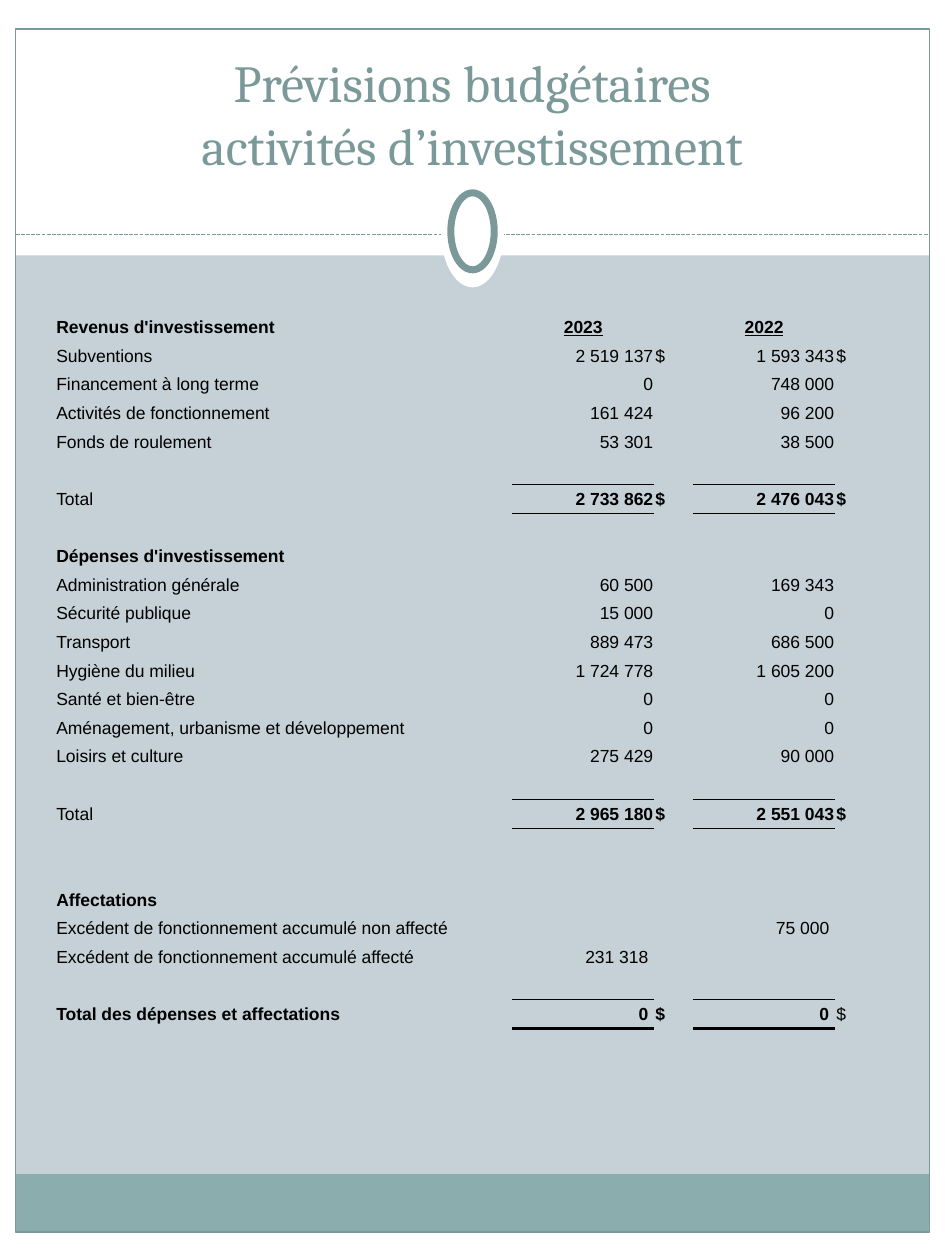
from lxml.etree import SubElement
from pptx import Presentation
from pptx.dml.color import RGBColor
from pptx.enum.dml import MSO_LINE_DASH_STYLE as DASH
from pptx.enum.shapes import MSO_CONNECTOR, MSO_SHAPE as SHAPE
from pptx.enum.text import MSO_ANCHOR as ANCHOR, MSO_AUTO_SIZE as AUTO_SIZE, PP_ALIGN as ALIGN
from pptx.oxml.ns import qn
from pptx.util import Pt

COLORS = {"page": "C5D1D7", "white": "FFFFFF", "band": "8CADAE", "accent": "7C999A", "text": "000000"}
NO_STYLE = "{2D5ABB26-0587-4C30-8999-92F81FD0307C}"
COLUMN_WIDTHS = (186.5, 52.5, 22.2, 81.2, 22.2, 81.2, 22.2)
AMOUNT_COLUMNS = (3, 5)
WIDE_LABEL_ROWS = (14, 21, 22)
BUDGET_ROWS = [
    ("years", "Revenus d'investissement", "2023", "2022"),
    ("currency", "Subventions", "2 519 137", "1 593 343"),
    ("item", "Financement à long terme", "0", "748 000"),
    ("item", "Activités de fonctionnement", "161 424", "96 200"),
    ("item", "Fonds de roulement", "53 301", "38 500"),
    ("item", "", "", ""),
    ("total", "Total", "2 733 862", "2 476 043"),
    ("item", "", "", ""),
    ("heading", "Dépenses d'investissement", "", ""),
    ("item", "Administration générale", "60 500", "169 343"),
    ("item", "Sécurité publique", "15 000", "0"),
    ("item", "Transport", "889 473", "686 500"),
    ("item", "Hygiène du milieu", "1 724 778", "1 605 200"),
    ("item", "Santé et bien-être", "0", "0"),
    ("item", "Aménagement, urbanisme et développement", "0", "0"),
    ("item", "Loisirs et culture", "275 429", "90 000"),
    ("item", "", "", ""),
    ("total", "Total", "2 965 180", "2 551 043"),
    ("item", "", "", ""),
    ("item", "", "", ""),
    ("heading", "Affectations", "", ""),
    ("item", "Excédent de fonctionnement accumulé non affecté", "", "75 000 "),
    ("item", "Excédent de fonctionnement accumulé affecté", "231 318 ", ""),
    ("item", "", "", ""),
    ("balance", "Total des dépenses et affectations", "0 ", "0 "),
]


def rgb(name):
    """Return the named palette colour."""
    return RGBColor.from_string(COLORS[name])


def add_panel(slide, kind, box, fill=None, line=None, weight=0.75):
    """Add a flat shape with an optional fill and outline."""
    shape = slide.shapes.add_shape(kind, *(Pt(value) for value in box))
    shape.shadow.inherit = False
    if fill:
        shape.fill.solid()
        shape.fill.fore_color.rgb = rgb(fill)
    else:
        shape.fill.background()
    if line:
        shape.line.color.rgb = rgb(line)
        shape.line.width = Pt(weight)
    else:
        shape.line.fill.background()


def add_frame(slide, left, top, width, height):
    """Draw the margins, footer band, outline, dashed rule and ring."""
    margin, header, footer = 9, 146, 16
    inner = width - 2 * margin
    rule, center = top + 134, left + width / 2
    bottom = top + height - footer
    for box in (
        (left, bottom, width, footer),
        (left, top, width, header),
        (left, top, margin, height),
        (left + width - margin, top, margin, height),
    ):
        add_panel(slide, SHAPE.RECTANGLE, box, "white")
    add_panel(slide, SHAPE.RECTANGLE, (left + margin, bottom - 33, inner, 33), "band")
    add_panel(slide, SHAPE.RECTANGLE, (left + margin, top + 16.5, inner, bottom - top - 16.5), line="accent")
    connector = slide.shapes.add_connector(
        MSO_CONNECTOR.STRAIGHT, Pt(left + margin), Pt(rule), Pt(left + width - margin), Pt(rule))
    connector.line.color.rgb = rgb("accent")
    connector.line.width = Pt(0.75)
    connector.line.dash_style = DASH.SQUARE_DOT
    SubElement(connector._element.spPr, qn("a:effectLst"))
    add_panel(slide, SHAPE.OVAL, (center - 18, top + 100.2, 36, 64), "white")
    add_panel(slide, SHAPE.OVAL, (center - 12.4, top + 110.2, 24.8, 44), "white", "accent", 4)


def add_text(paragraph, text, size, font, color, bold=False, underline=False):
    """Add one formatted run to a paragraph."""
    run = paragraph.add_run()
    run.text = text
    run.font.size = Pt(size)
    run.font.name = font
    run.font.color.rgb = rgb(color)
    run.font.bold = bold
    run.font.underline = underline


def add_title(slide, left, top, width, height):
    """Place the two-line title in the title placeholder, above the frame."""
    title = slide.shapes.title
    title.left, title.top, title.width, title.height = (Pt(value) for value in (left, top, width, height))
    slide.shapes._spTree.append(title._element)
    frame = title.text_frame
    frame.auto_size = AUTO_SIZE.NONE
    frame.word_wrap = True
    frame.vertical_anchor = ANCHOR.BOTTOM
    paragraph = frame.paragraphs[0]
    paragraph.alignment = ALIGN.CENTER
    add_text(paragraph, "Prévisions budgétaires", 29.7, "Cambria", "accent")
    paragraph.add_line_break()
    add_text(paragraph, "activités d’investissement", 29.7, "Cambria", "accent")


def add_border(cell, side, weight):
    """Draw a solid border on one side of a cell."""
    line = SubElement(cell._tc.get_or_add_tcPr(), qn(f"a:ln{side}"), w=str(Pt(weight)))
    fill = SubElement(line, qn("a:solidFill"))
    SubElement(fill, qn("a:srgbClr"), val=COLORS["text"])


def fill_cell(cell, text="", alignment=ALIGN.LEFT, bold=False, underline=False):
    """Format a cell and write its text."""
    cell.margin_left = cell.margin_right = cell.margin_top = Pt(0.7)
    cell.margin_bottom = 0
    cell.vertical_anchor = ANCHOR.MIDDLE
    cell.fill.background()
    paragraph = cell.text_frame.paragraphs[0]
    paragraph.alignment = alignment
    if text:
        add_text(paragraph, text, 10, "Arial", "text", bold, underline)
    else:
        paragraph._p.get_or_add_endParaRPr().set("sz", "1000")


def add_budget_table(slide, left, top, width, height):
    """Build the two-year budget table."""
    table = slide.shapes.add_table(
        len(BUDGET_ROWS), len(COLUMN_WIDTHS), Pt(left), Pt(top), Pt(width), Pt(height)).table
    table.first_row = table.horz_banding = False
    table._tbl.tblPr.find(qn("a:tableStyleId")).text = NO_STYLE
    for column, column_width in zip(table.columns, COLUMN_WIDTHS):
        column.width = Pt(column_width)
    for index, (kind, label, *amounts) in enumerate(BUDGET_ROWS):
        table.rows[index].height = Pt(height / len(BUDGET_ROWS))
        is_sum = kind in ("total", "balance")
        contents = {0: (label, ALIGN.LEFT, kind in ("years", "heading", "balance"))}
        for column, amount in zip(AMOUNT_COLUMNS, amounts):
            if kind == "years":
                contents[column] = (amount, ALIGN.CENTER, True, True)
            else:
                contents[column] = (amount, ALIGN.RIGHT, is_sum)
            if is_sum or kind == "currency":
                is_bold = is_sum and (kind, column) != ("balance", AMOUNT_COLUMNS[-1])
                contents[column + 1] = ("$", ALIGN.LEFT, is_bold)
            if is_sum:
                add_border(table.cell(index - 1, column), "B", 0.5)
                add_border(table.cell(index, column), "T", 0.5)
                add_border(table.cell(index, column), "B", 2 if kind == "balance" else 0.5)
        for column in range(len(COLUMN_WIDTHS)):
            fill_cell(table.cell(index, column), *contents.get(column, ()))
        if index in WIDE_LABEL_ROWS:
            table.cell(index, 0).merge(table.cell(index, 1))
    for row in table.rows:
        for cell in row.cells:
            properties = cell._tc.tcPr
            for fill in properties.findall(qn("a:noFill")):
                properties.append(fill)


def main():
    """Create the budget slide and save it."""
    presentation = Presentation()
    presentation.slide_width, presentation.slide_height = Pt(540), Pt(720)
    slide = presentation.slides.add_slide(presentation.slide_layouts[5])
    slide.background.fill.solid()
    slide.background.fill.fore_color.rgb = rgb("page")
    add_frame(slide, 0, 0, 540, 720)
    add_title(slide, 18, 24, 504, 80)
    add_budget_table(slide, 31.5, 178.7, 468, 409)
    presentation.save("out.pptx")


if __name__ == "__main__":
    main()
